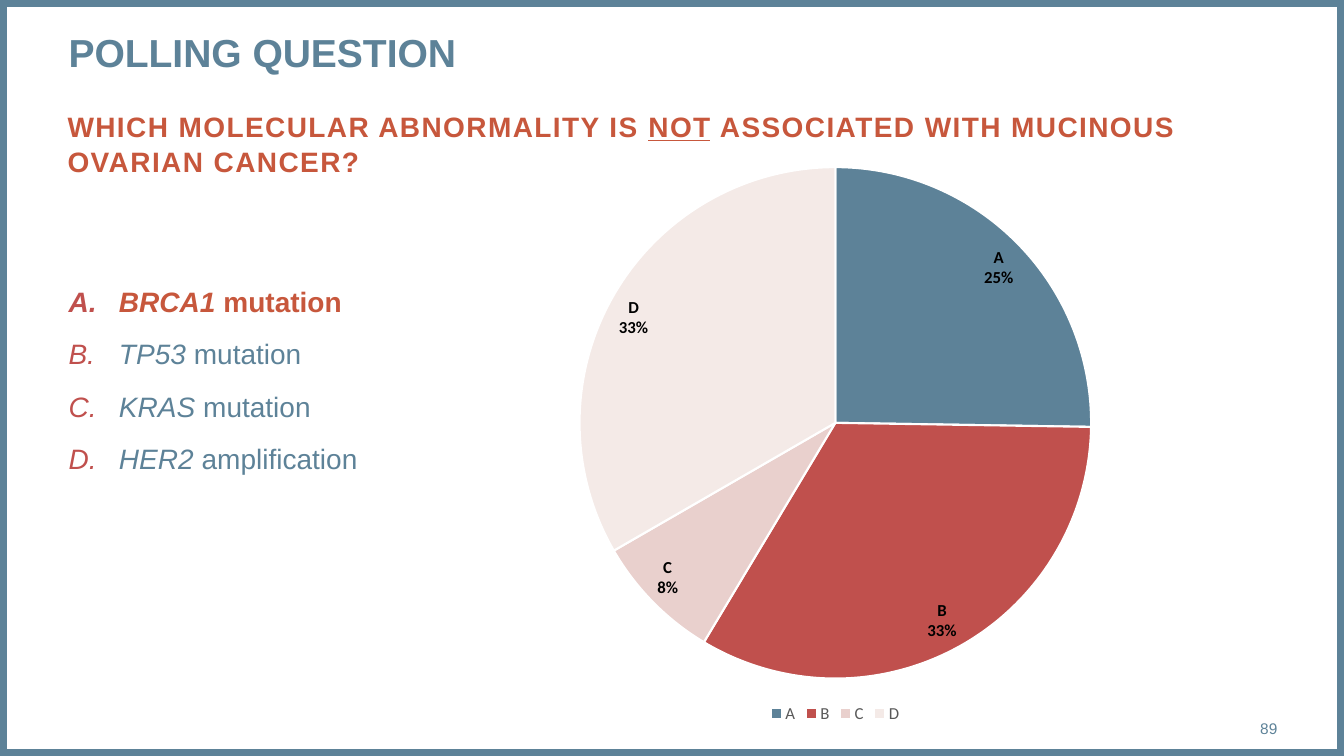
import dataclasses

import pptx
import pptx.chart.data
import pptx.dml.color
import pptx.enum.chart
import pptx.enum.shapes
import pptx.enum.text
import pptx.oxml
import pptx.oxml.ns
import pptx.util
from pptx.util import Inches


@dataclasses.dataclass(frozen=True)
class Theme:
    """Colours, fonts and type sizes of the slide."""
    blue: str = "5D8298"
    orange: str = "C7573C"
    red: str = "C0504D"
    grey: str = "595959"
    black: str = "000000"
    white: str = "FFFFFF"
    slices: tuple = ("5D8298", "C0504D", "E9D0CD", "F4EAE7")
    text_font: str = "Arial"
    chart_font: str = "Calibri"
    title_size: float = 27.9
    body_size: float = 20
    chart_size: float = 12
    number_size: float = 11


THEME = Theme()


def rgb(colour):
    """Return the colour object for a hex string."""
    return pptx.dml.color.RGBColor.from_string(colour)


def style_font(font, name, size, colour, bold=False):
    """Set the face, size, colour and weight of a font."""
    font.name = name
    font.size = pptx.util.Pt(size)
    font.color.rgb = rgb(colour)
    font.bold = bold


def add_text_box(slide, box):
    """Add an empty wrapping text box without insets and return its frame."""
    frame = slide.shapes.add_textbox(*map(Inches, box)).text_frame
    frame.word_wrap = True
    frame.margin_left = frame.margin_top = 0
    frame.margin_right = frame.margin_bottom = 0
    return frame


def add_run(paragraph, text, size, colour, bold=False):
    """Append a run in the text font and return it."""
    run = paragraph.add_run()
    run.text = text
    style_font(run.font, THEME.text_font, size, colour, bold)
    return run


def add_frame(slide, box):
    """Draw the border around the slide."""
    border = slide.shapes.add_shape(
        pptx.enum.shapes.MSO_SHAPE.RECTANGLE, *map(Inches, box))
    border.shadow.inherit = False
    border.fill.background()
    border.line.color.rgb = rgb(THEME.blue)
    border.line.width = pptx.util.Pt(10)


def add_title(slide, box, text):
    """Write the slide title."""
    paragraph = add_text_box(slide, box).paragraphs[0]
    add_run(paragraph, text, THEME.title_size, THEME.blue, True)


def add_question(slide, box, parts):
    """Write the letter-spaced question from (text, underlined) parts."""
    paragraph = add_text_box(slide, box).paragraphs[0]
    paragraph.line_spacing = 1.05
    for text, underlined in parts:
        run = add_run(paragraph, text, THEME.body_size, THEME.orange, True)
        run.font.underline = underlined
        run.font._element.set("spc", "100")


def add_lettering(paragraph):
    """Give a paragraph a hanging indent and an automatic capital letter."""
    properties = paragraph._p.get_or_add_pPr()
    properties.set("marL", str(Inches(0.5)))
    properties.set("indent", str(-Inches(0.5)))
    namespace = pptx.oxml.ns.nsdecls("a")
    for element in (
            f'<a:buClr {namespace}><a:srgbClr val="{THEME.red}"/></a:buClr>',
            f'<a:buFont {namespace} typeface="{THEME.text_font}"/>',
            f'<a:buAutoNum {namespace} type="alphaUcPeriod"/>'):
        properties.append(pptx.oxml.parse_xml(element))


def add_answers(slide, box, answers, correct):
    """List the answers, with the correct one highlighted."""
    frame = add_text_box(slide, box)
    for index, (gene, change) in enumerate(answers):
        paragraph = frame.add_paragraph() if index else frame.paragraphs[0]
        add_lettering(paragraph)
        paragraph.line_spacing = 1.05
        if index:
            paragraph.space_before = pptx.util.Pt(12)
        chosen = index == correct
        colour = THEME.orange if chosen else THEME.blue
        add_run(paragraph, gene, THEME.body_size, colour, chosen).font.italic = True
        add_run(paragraph, f" {change}", THEME.body_size, colour, chosen)


def add_poll_chart(slide, box, votes):
    """Draw the pie of poll results with a legend below."""
    data = pptx.chart.data.CategoryChartData()
    data.categories = list(votes)
    data.add_series("Series 1", list(votes.values()))
    chart = slide.shapes.add_chart(
        pptx.enum.chart.XL_CHART_TYPE.PIE, *map(Inches, box), data).chart
    style_font(chart.font, THEME.chart_font, THEME.chart_size, THEME.black)
    chart.has_title = False
    chart.has_legend = True
    chart.legend.position = pptx.enum.chart.XL_LEGEND_POSITION.BOTTOM
    chart.legend.include_in_layout = False
    style_font(chart.legend.font, THEME.chart_font, THEME.chart_size, THEME.grey)
    plot = chart.plots[0]
    plot.vary_by_categories = True
    for index, colour in enumerate(THEME.slices):
        piece = plot.series[0].points[index].format
        piece.fill.solid()
        piece.fill.fore_color.rgb = rgb(colour)
        piece.line.color.rgb = rgb(THEME.white)
        piece.line.width = pptx.util.Pt(1.5)
    labels = plot.series[0].data_labels
    style_font(labels.font, THEME.chart_font, THEME.chart_size, THEME.black, True)
    labels.show_category_name = True
    labels.show_percentage = True
    labels.show_value = False
    labels.position = pptx.enum.chart.XL_LABEL_POSITION.INSIDE_END
    separator = pptx.oxml.parse_xml(
        f'<c:separator {pptx.oxml.ns.nsdecls("c")}>\n</c:separator>')
    bubble = labels._element.find(pptx.oxml.ns.qn("c:showBubbleSize"))
    bubble.addnext(separator)


def add_slide_number(slide, box, number):
    """Write the slide number at the lower right."""
    frame = add_text_box(slide, box)
    frame.vertical_anchor = pptx.enum.text.MSO_ANCHOR.MIDDLE
    paragraph = frame.paragraphs[0]
    paragraph.alignment = pptx.enum.text.PP_ALIGN.RIGHT
    add_run(paragraph, number, THEME.number_size, THEME.blue)


def add_polling_slide(presentation):
    """Build the polling question slide."""
    slide = presentation.slides.add_slide(presentation.slide_layouts[6])
    slide.background.fill.solid()
    slide.background.fill.fore_color.rgb = rgb(THEME.white)
    add_frame(slide, (0, 0, 13.33, 7.5))
    add_question(slide, (0.67, 1.07, 12, 0.77), (
        ("WHICH MOLECULAR ABNORMALITY IS ", False),
        ("NOT", True),
        (" ASSOCIATED WITH MUCINOUS OVARIAN CANCER?", False)))
    add_title(slide, (0.68, 0.28, 11.99, 0.94), "POLLING QUESTION")
    add_answers(slide, (0.68, 2.81, 11.99, 3.93), (
        ("BRCA1", "mutation"),
        ("TP53", "mutation"),
        ("KRAS", "mutation"),
        ("HER2", "amplification")), correct=0)
    add_poll_chart(slide, (3.44, 1.52, 9.69, 5.7),
                   {"A": 25, "B": 33, "C": 8, "D": 33})
    add_slide_number(slide, (11.81, 7.03, 0.86, 0.4), "89")


def main():
    """Create and save the presentation."""
    presentation = pptx.Presentation()
    presentation.slide_width = Inches(13.33)
    presentation.slide_height = Inches(7.5)
    add_polling_slide(presentation)
    presentation.save("out.pptx")


if __name__ == "__main__":
    main()
